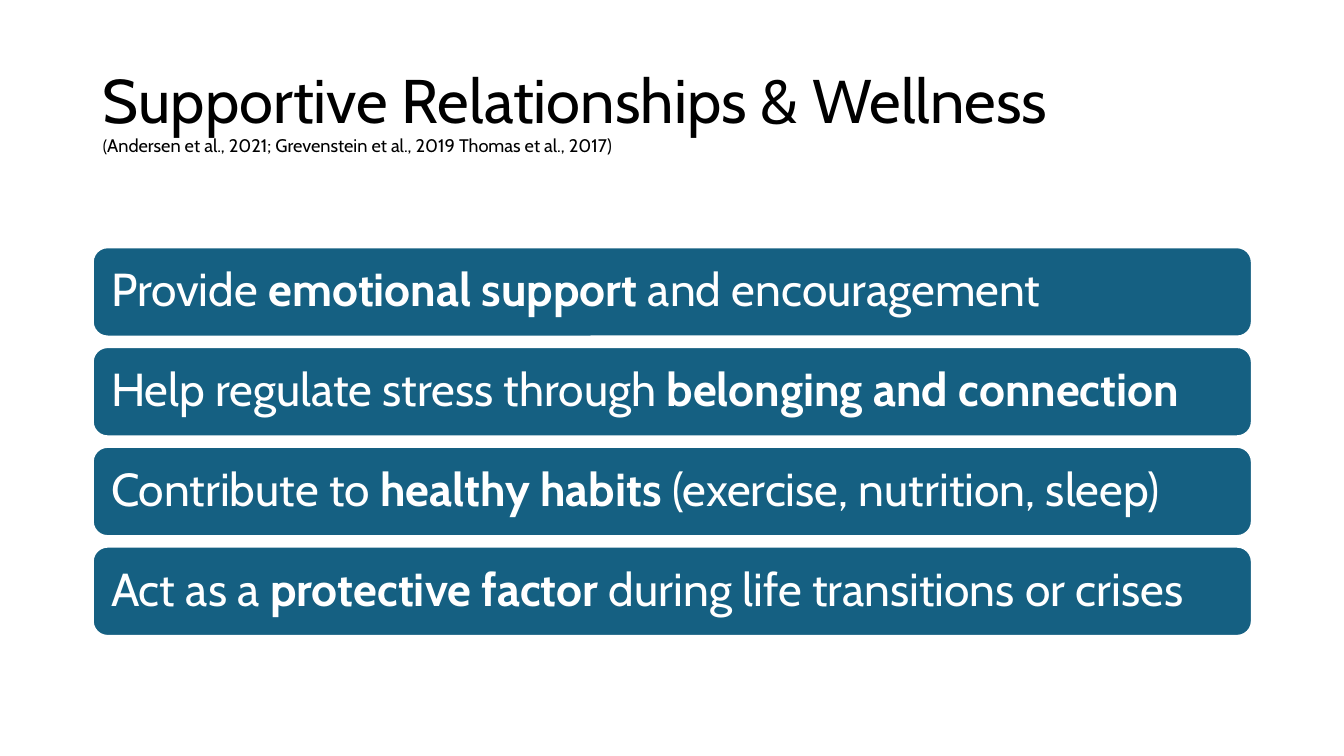
from pptx import Presentation
from pptx.dml.color import RGBColor
from pptx.enum.shapes import MSO_SHAPE as Shape
from pptx.enum.text import MSO_ANCHOR as Anchor, MSO_AUTO_SIZE as AutoSize, PP_ALIGN as Align
from pptx.util import Pt

# Content: each bar is a list of (text, bold) spans
TITLE = "Supportive Relationships & Wellness"
CITATION = [("(", 12), ("Andersen et al., 2021; Grevenstein et al., 2019 Thomas et al., 2017)", 13)]
BENEFITS = [
    [("Provide ", False), ("emotional support", True), (" and encouragement", False)],
    [("Help regulate stress through ", False), ("belonging and connection", True)],
    [("Contribute to ", False), ("healthy habits", True), (" (exercise, nutrition, sleep)", False)],
    [("Act as a ", False), ("protective factor", True), (" during life transitions or crises", False)],
]


class Theme:
    font = "Cabin"
    ink = RGBColor(0x00, 0x00, 0x00)
    bar = RGBColor(0x15, 0x60, 0x82)
    white = RGBColor(0xFF, 0xFF, 0xFF)
    title_size = 44
    bar_size = Pt(33)
    line_spacing = 0.9


# Layout in points
LEFT, WIDTH = 66.24, 828
TITLE_TOP, TITLE_HEIGHT = 28.8, 104.4
BAR_TOP, BAR_HEIGHT, BAR_GAP = 176.6, 63.8, 7.48
BAR_INSET = Pt(10)


def style_paragraph(para, color):
    para.alignment = Align.LEFT
    para.line_spacing = Theme.line_spacing
    para.font.name = Theme.font
    para.font.color.rgb = color


def add_title(page):
    title = page.shapes.title
    title.left, title.top = Pt(LEFT), Pt(TITLE_TOP)
    title.width, title.height = Pt(WIDTH), Pt(TITLE_HEIGHT)
    frame = title.text_frame
    frame.vertical_anchor = Anchor.MIDDLE
    frame.auto_size = AutoSize.NONE
    para = frame.paragraphs[0]
    style_paragraph(para, Theme.ink)
    for index, (text, size) in enumerate([(TITLE, Theme.title_size), *CITATION]):
        if index == 1:
            para.add_line_break()
        span = para.add_run()
        span.text = text
        span.font.size = Pt(size)


def add_bar(page, top, spans):
    bar = page.shapes.add_shape(Shape.ROUNDED_RECTANGLE, Pt(LEFT), Pt(top), Pt(WIDTH), Pt(BAR_HEIGHT))
    bar.shadow.inherit = False
    bar.fill.solid()
    bar.fill.fore_color.rgb = Theme.bar
    bar.line.color.rgb = Theme.white
    bar.line.width = Pt(1.5)
    frame = bar.text_frame
    frame.word_wrap = True
    frame.vertical_anchor = Anchor.MIDDLE
    frame.margin_left = frame.margin_right = BAR_INSET
    frame.margin_top = frame.margin_bottom = BAR_INSET
    para = frame.paragraphs[0]
    style_paragraph(para, Theme.white)
    para.font.size = Theme.bar_size
    for text, bold in spans:
        span = para.add_run()
        span.text = text
        span.font.bold = bold


def main():
    deck = Presentation()
    deck.slide_width, deck.slide_height = Pt(960), Pt(540)
    page = deck.slides.add_slide(deck.slide_layouts[5])  # title only

    # Heading with citation
    add_title(page)

    # Stack of benefit bars
    for index, spans in enumerate(BENEFITS):
        add_bar(page, BAR_TOP + index * (BAR_HEIGHT + BAR_GAP), spans)

    deck.save("out.pptx")


if __name__ == "__main__":
    main()
